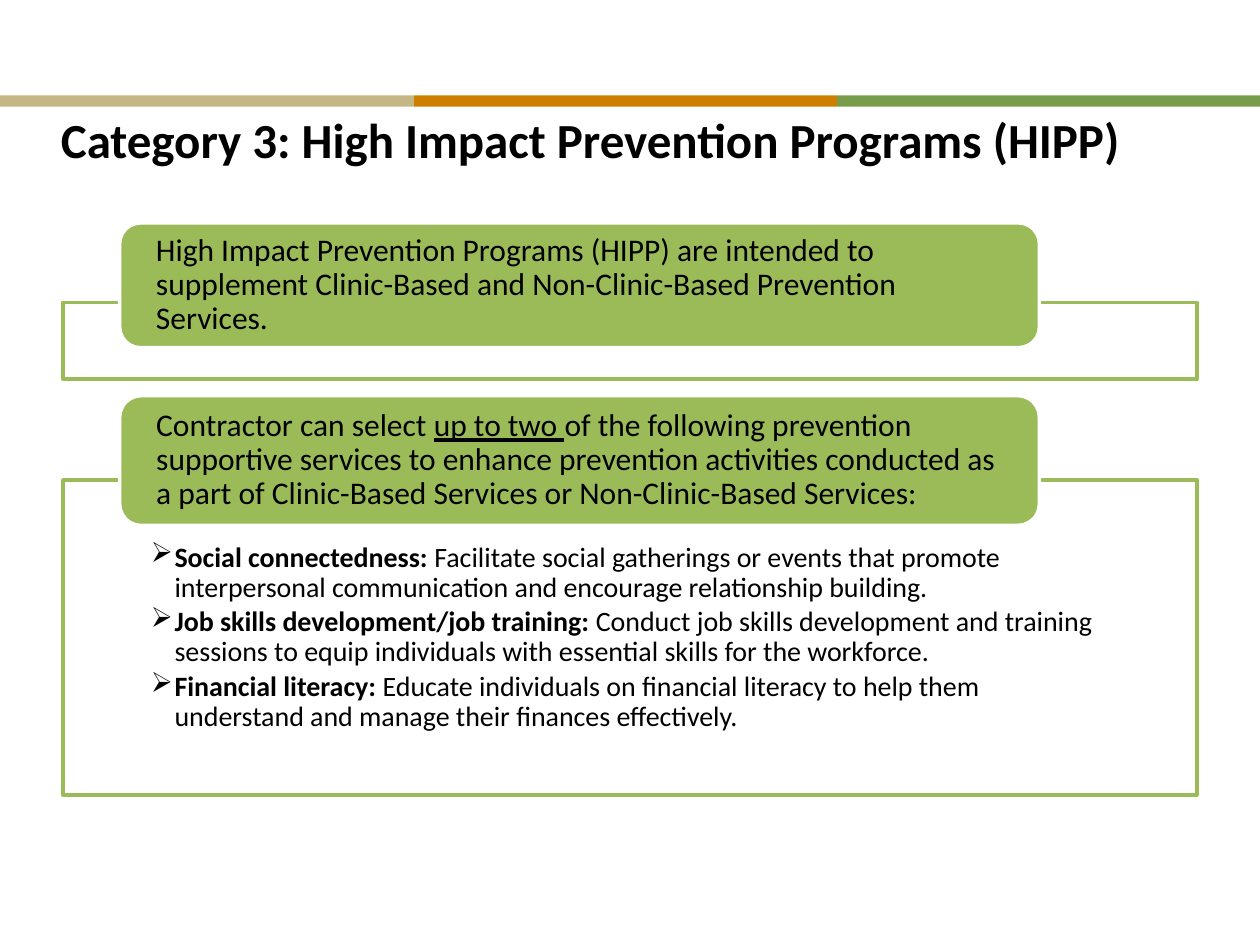
"""Build the Category 3 slide: a striped header and two framed green callouts."""
from dataclasses import dataclass

from lxml import etree
from pptx import Presentation
from pptx.dml.color import RGBColor as Rgb
from pptx.enum import shapes, text
from pptx.oxml import ns
from pptx.util import Pt


@dataclass(frozen=True)
class Theme:
    font: str = "Calibri"
    ink: Rgb = Rgb(0, 0, 0)
    white: Rgb = Rgb(255, 255, 255)
    green: Rgb = Rgb.from_string("9BBB59")
    bands: tuple = ("C5B783", "CF7F00", "789D4A")
    title: int = 28
    lead: int = 18
    item: int = 16


theme = Theme()


def draw(kind, rect, fill, line=None):
    shape = slide.shapes.add_shape(kind, *map(Pt, rect))
    shape.shadow.inherit = False
    shape.fill.solid()
    shape.fill.fore_color.rgb = fill
    if line is None:
        shape.line.fill.background()
    else:
        shape.line.color.rgb = line
        shape.line.width = Pt(2)
    return shape


def write(para, parts, size, after=0):
    para.alignment = text.PP_ALIGN.LEFT
    para.line_spacing = 0.9
    para.space_after = Pt(after)
    for words, style in parts:
        run = para.add_run()
        run.text = words
        run.font.name = theme.font
        run.font.size = Pt(size)
        run.font.color.rgb = theme.ink
        run.font.bold = style == "bold"
        run.font.underline = style == "under"


deck = Presentation()
deck.slide_width, deck.slide_height = Pt(720), Pt(540)
slide = deck.slides.add_slide(deck.slide_layouts[6])

edges = (0, 236.6, 478.4, 720)
for left, right, color in zip(edges, edges[1:], theme.bands):
    draw(shapes.MSO_SHAPE.RECTANGLE, (left, 54.6, right - left, 6.4), Rgb.from_string(color))

title = slide.shapes.add_textbox(Pt(34.8), Pt(62.8), Pt(650), Pt(60)).text_frame
title.word_wrap = True
title.margin_left = title.margin_right = title.margin_top = title.margin_bottom = 0
write(title.paragraphs[0], [("Category 3: High Impact Prevention Programs (HIPP)", "bold")], theme.title)
title.paragraphs[0].line_spacing = 1.0

items = [
    ("Social connectedness: ",
     "Facilitate social gatherings or events that promote interpersonal communication "
     "and encourage relationship building."),
    ("Job skills development/job training: ",
     "Conduct job skills development and training sessions to equip individuals with "
     "essential skills for the workforce."),
    ("Financial literacy: ",
     "Educate individuals on financial literacy to help them understand and manage "
     "their finances effectively."),
]
groups = [
    (172.8, 43.9, 127.4, 71.3, [
        ("High Impact Prevention Programs (HIPP) are intended to supplement "
         "Clinic-Based and Non-Clinic-Based Prevention Services.", "")], []),
    (274.3, 180, 226.1, 74.2, [
        ("Contractor can select ", ""),
        ("up to two ", "under"),
        ("of the following prevention supportive services to enhance prevention "
         "activities conducted as a part of Clinic-Based Services or "
         "Non-Clinic-Based Services:", "")], items),
]

for top, height, tab_top, tab_height, lead, points in groups:
    frame = draw(shapes.MSO_SHAPE.RECTANGLE, (36, top, 648, height), theme.white, theme.green)
    tint = frame.fill._xPr.find(".//" + ns.qn("a:srgbClr"))
    etree.SubElement(tint, ns.qn("a:alpha"), val="90000")
    body = frame.text_frame
    body.word_wrap = True
    body.vertical_anchor = text.MSO_ANCHOR.TOP
    body.margin_left = body.margin_right = Pt(50.3)
    body.margin_top, body.margin_bottom = Pt(36), Pt(8.5)
    for i, (name, words) in enumerate(points):
        para = body.add_paragraph() if i else body.paragraphs[0]
        props = para._p.get_or_add_pPr()
        props.set("marL", str(Pt(13.5)))
        props.set("indent", str(-Pt(13.5)))
        etree.SubElement(props, ns.qn("a:buChar"), char="➢")
        write(para, [(name, "bold"), (words, "")], theme.item, 2.4)

    tab = draw(shapes.MSO_SHAPE.ROUNDED_RECTANGLE, (68.4, tab_top, 525.6, tab_height),
               theme.green, theme.white)
    label = tab.text_frame
    label.word_wrap = True
    label.vertical_anchor = text.MSO_ANCHOR.MIDDLE
    label.margin_left = label.margin_right = Pt(17.3)
    label.margin_top = label.margin_bottom = 0
    write(label.paragraphs[0], lead, theme.lead)

deck.save("out.pptx")
